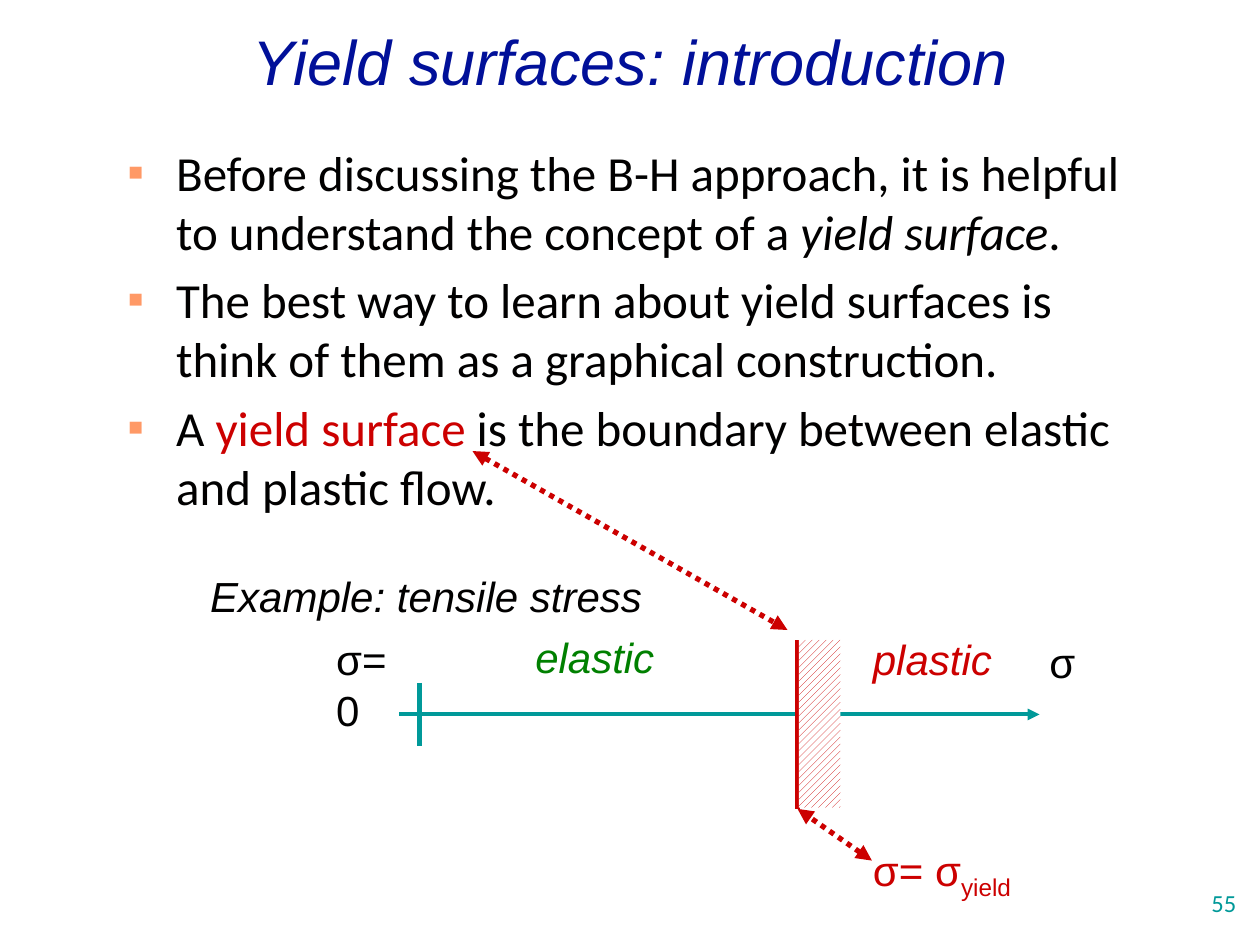
import pptx
import pptx.util
import pptx.dml.color
import pptx.enum.dml
import pptx.enum.shapes
import pptx.enum.text
import pptx.oxml
import pptx.oxml.ns

Inches, Pt = pptx.util.Inches, pptx.util.Pt
rgb = pptx.dml.color.RGBColor.from_string
ALIGN = pptx.enum.text.PP_ALIGN
qn = pptx.oxml.ns.qn
BLACK, RED, TEAL, GREEN = "010000", "CC0000", "009999", "008000"


def write(par, parts, size, font="Arial"):
    """Fill a paragraph with (text, colour, italic) runs."""
    for words, color, italic in parts:
        run = par.add_run()
        run.text = words
        run.font.size = Pt(size)
        run.font.name = font
        run.font.italic = italic
        run.font.color.rgb = rgb(color)


def draw(x1, y1, x2, y2, color, width, ends=(), dotted=False):
    """Draw a line; ends lists headEnd and/or tailEnd for arrowheads."""
    line = slide.shapes.add_connector(
        pptx.enum.shapes.MSO_CONNECTOR.STRAIGHT,
        Inches(x1), Inches(y1), Inches(x2), Inches(y2))
    line.line.color.rgb = rgb(color)
    line.line.width = Pt(width)
    if dotted:
        line.line.dash_style = pptx.enum.dml.MSO_LINE.ROUND_DOT
    ln = line.line._get_or_add_ln()
    for end in ends:
        ln.append(ln.makeelement(qn("a:" + end), {"type": "triangle"}))
    props = line._element.spPr
    props.append(props.makeelement(qn("a:effectLst"), {}))


deck = pptx.Presentation()
deck.slide_width, deck.slide_height = Inches(10), Inches(7.5)
slide = deck.slides.add_slide(deck.slide_layouts[5])

# Title
title = slide.shapes.title
title.left, title.top = Inches(1.67), Inches(0)
title.width, title.height = Inches(6.67), Inches(0.83)
frame = title.text_frame
frame.auto_size = pptx.enum.text.MSO_AUTO_SIZE.NONE
frame.vertical_anchor = pptx.enum.text.MSO_ANCHOR.MIDDLE
head = frame.paragraphs[0]
head.alignment = ALIGN.CENTER
head.line_spacing = 1.2
write(head, [("Yield surfaces: introduction", "011099", True)], 36)

# Bulleted text
points = [
    [("Before discussing the B-H approach, it is helpful to understand "
      "the concept of a ", BLACK, False),
     ("yield surface", BLACK, True), (".", BLACK, False)],
    [("The best way to learn about yield surfaces is think of them as "
      "a graphical construction.", BLACK, False)],
    [("A ", BLACK, False), ("yield surface", RED, False),
     (" is the boundary between elastic and plastic flow.", BLACK, False)],
]
bullet = (
    '<a:buClr %s><a:srgbClr val="FF9966"/></a:buClr>',
    '<a:buSzPct %s val="50000"/>',
    '<a:buFont %s typeface="Arial"/>',
    '<a:buChar %s char="■"/>',
)
body = slide.shapes.add_textbox(
    Inches(0.92), Inches(1.08), Inches(8.33), Inches(3)).text_frame
body.word_wrap = True
for i, parts in enumerate(points):
    par = body.add_paragraph() if i else body.paragraphs[0]
    par.space_before = Pt(5.6)
    write(par, parts, 28, "Calibri")
    props = par._p.get_or_add_pPr()
    props.set("marL", str(Inches(0.38)))
    props.set("indent", str(-Inches(0.38)))
    for tag in bullet:
        props.append(pptx.oxml.parse_xml(tag % pptx.oxml.ns.nsdecls("a")))

# Stress axis, its zero mark and the yield point
draw(3.17, 5.67, 8.25, 5.67, TEAL, 2.25, ["tailEnd"])
draw(3.33, 5.42, 3.33, 5.92, TEAL, 3)
draw(6.33, 5.08, 6.33, 6.42, RED, 3)

zone = slide.shapes.add_shape(
    pptx.enum.shapes.MSO_SHAPE.RECTANGLE,
    Inches(6.34), Inches(5.08), Inches(0.33), Inches(1.33))
zone.shadow.inherit = False
zone.line.fill.background()
zone.fill.patterned()
zone.fill.pattern = pptx.enum.dml.MSO_PATTERN.WIDE_UPWARD_DIAGONAL
zone.fill.fore_color.rgb = rgb(RED)
zone.fill.back_color.rgb = rgb("FFFFFF")

# Dotted arrows that point to the yield surface
both = ["headEnd", "tailEnd"]
draw(3.75, 3.58, 6.25, 5, RED, 3, both, dotted=True)
draw(6.92, 6.83, 6.33, 6.42, RED, 3, both, dotted=True)

# Labels
labels = [
    (1.57, 4.48, 3.75, "Example: tensile stress", BLACK, True),
    (2.57, 4.98, 0.78, "σ=0", BLACK, False),
    (8.23, 5, 0.4, "σ", BLACK, False),
    (4.15, 4.96, 1.24, "elastic", GREEN, True),
    (6.83, 4.98, 1.24, "plastic", RED, True),
    (6.83, 6.65, 1.35, "σ= σ", RED, False),
]
for x, y, width, words, color, italic in labels:
    box = slide.shapes.add_textbox(
        Inches(x), Inches(y), Inches(width), Inches(0.5))
    box.text_frame.word_wrap = False
    par = box.text_frame.paragraphs[0]
    write(par, [(words, color, italic)], 24)

# Subscript of the last label
write(par, [("yield", RED, False)], 24)
par.runs[-1].font._element.set("baseline", "-25000")

# Page number
page = slide.shapes.add_textbox(
    Inches(7.83), Inches(7), Inches(2.08), Inches(0.5))
page.text_frame.word_wrap = True
par = page.text_frame.paragraphs[0]
par.alignment = ALIGN.RIGHT
write(par, [("55", TEAL, False)], 14, "Calibri")

deck.save("out.pptx")
